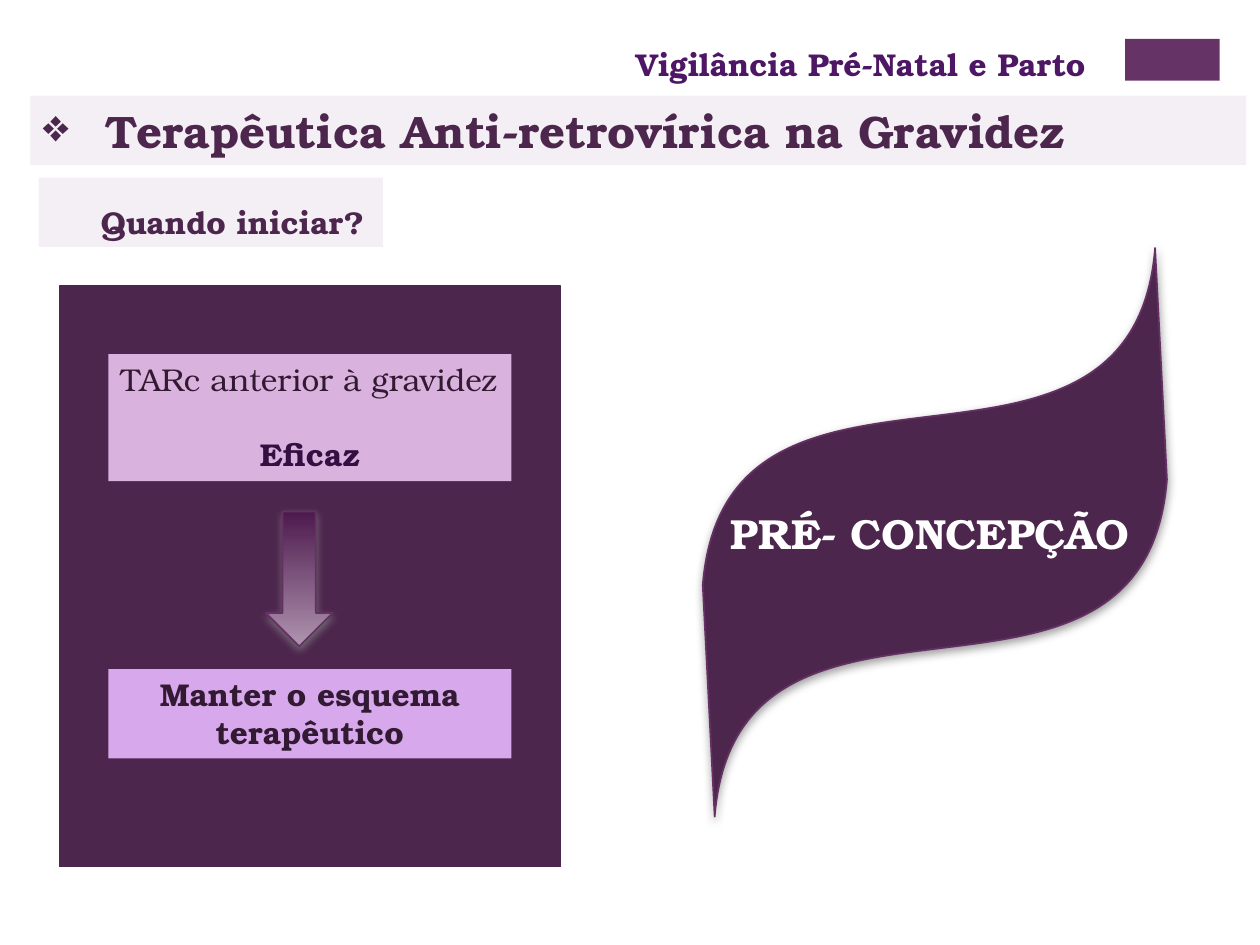
from lxml.etree import SubElement
from pptx import Presentation
from pptx.dml.color import RGBColor
from pptx.enum.shapes import MSO_SHAPE
from pptx.enum.text import MSO_ANCHOR, MSO_AUTO_SIZE, PP_ALIGN
from pptx.oxml.ns import qn
from pptx.util import Emu, Inches, Pt

W, H = 10, 7.5
FONT = "TeX Gyre Bonum"
COLORS = {
    "tab": "663366", "band": "F3EFF5", "plum": "4D264D", "edge": "653165",
    "header": "4E1765", "body": "331A33", "strong": "330F42",
    "before": "D9B2DD", "after": "D7A8EB", "white": "FFFFFF",
    "arrow_top": "4D1A4D", "arrow_tip": "AF94AF", "shadow": "808080",
}
PANEL = (0.47, 2.27, 3.98, 4.61)
MARGIN = 0.39


def rgb(name):
    return RGBColor.from_string(COLORS[name])


def place(sp, left, top, width, height):
    sp.left, sp.top, sp.width, sp.height = map(
        Inches, (left, top, width, height))


def add_text(tf, text, size=18, color="body", bold=True, align=PP_ALIGN.LEFT,
             anchor=MSO_ANCHOR.TOP, before=0, new=False):
    """Write one formatted paragraph, as a further one if new is set."""
    tf.word_wrap = True
    tf.auto_size = MSO_AUTO_SIZE.NONE
    tf.vertical_anchor = anchor
    p = tf.add_paragraph() if new else tf.paragraphs[0]
    p.alignment = align
    p.space_before = Pt(before)
    r = p.add_run()
    r.text = text
    r.font.name, r.font.size, r.font.bold = FONT, Pt(size), bold
    r.font.color.rgb = rgb(color)
    return p


def add_box(s, at, fill=None, line=None, width=1, kind=MSO_SHAPE.RECTANGLE):
    sp = s.shapes.add_shape(kind, *map(Inches, at))
    sp.shadow.inherit = False
    if fill:
        sp.fill.solid()
        sp.fill.fore_color.rgb = rgb(fill)
    if line:
        sp.line.color.rgb = rgb(line)
        sp.line.width = Pt(width)
    else:
        sp.line.fill.background()
    return sp


def add_label(s, at, text, **fmt):
    tf = s.shapes.add_textbox(*map(Inches, at)).text_frame
    add_text(tf, text, **fmt)


def add_shadow(sp):
    effects = sp._element.spPr.find(qn("a:effectLst"))
    shadow = SubElement(effects, qn("a:outerShdw"), blurRad=str(Pt(5)),
                        dist=str(Pt(2)), dir="5400000", rotWithShape="0")
    color = SubElement(shadow, qn("a:srgbClr"), val=COLORS["shadow"])
    SubElement(color, qn("a:alpha"), val="75000")


def add_bullet(p, char, indent):
    pPr = p._p.get_or_add_pPr()
    pPr.set("marL", str(Inches(indent)))
    pPr.set("indent", str(Emu(-Inches(indent))))
    SubElement(pPr, qn("a:buChar"), char=char)


def add_title(s):
    title = s.shapes.title
    place(title, 0.24, 0.76, 9.65, 0.55)
    title.fill.solid()
    title.fill.fore_color.rgb = rgb("band")
    p = add_text(title.text_frame, "Terapêutica Anti-retrovírica na Gravidez",
                 size=26, color="plum", anchor=MSO_ANCHOR.MIDDLE)
    add_bullet(p, "❖", 0.5)


def add_header(s):
    add_box(s, (0.893 * W, 0.31, 0.75, 0.33), "tab")
    add_label(s, (1.87, 0.31, 6.93, 0.4), "Vigilância Pré-Natal e Parto ",
              color="header", align=PP_ALIGN.RIGHT)
    add_box(s, (0.31, 1.41, 2.73, 0.55), "band")
    add_label(s, (0.7, 1.56, 2.89, 0.4), "Quando iniciar?", color="plum")


def add_panel(s):
    add_box(s, PANEL, "plum", "plum", 0.75)
    left, width = PANEL[0] + MARGIN, PANEL[2] - 2 * MARGIN

    tf = add_box(s, (left, 2.81, width, 1.01), "before").text_frame
    add_text(tf, "TARc anterior à gravidez", bold=False)
    add_text(tf, "Eficaz", color="strong", align=PP_ALIGN.CENTER,
             before=21, new=True)

    tf = add_box(s, (left, 5.31, width, 0.71), "after").text_frame
    add_text(tf, "Manter o esquema terapêutico", align=PP_ALIGN.CENTER)

    arrow = add_box(s, (2.11, 4.06, 0.53, 1.07), line="edge",
                    kind=MSO_SHAPE.DOWN_ARROW)
    arrow.fill.gradient()
    arrow.fill.gradient_angle = 270
    for stop, pos, name in zip(arrow.fill.gradient_stops, (0, 1),
                               ("arrow_top", "arrow_tip")):
        stop.position = pos
        stop.color.rgb = rgb(name)
    add_shadow(arrow)


def add_wave(s):
    wave = add_box(s, (4.67, 2.95, 5.5, 2.55), "plum", "edge",
                   kind=MSO_SHAPE.WAVE)
    wave.adjustments[0], wave.adjustments[1] = 0.2, -0.093
    wave.rotation = 323.3
    add_shadow(wave)
    add_label(s, (5.7, 3.98, 3.44, 0.5), "PRÉ- CONCEPÇÃO",
              size=24, color="white")


def main():
    prs = Presentation()
    prs.slide_width, prs.slide_height = Inches(W), Inches(H)
    s = prs.slides.add_slide(prs.slide_layouts[5])
    add_title(s)
    add_header(s)
    add_panel(s)
    add_wave(s)
    prs.save("out.pptx")


if __name__ == "__main__":
    main()
